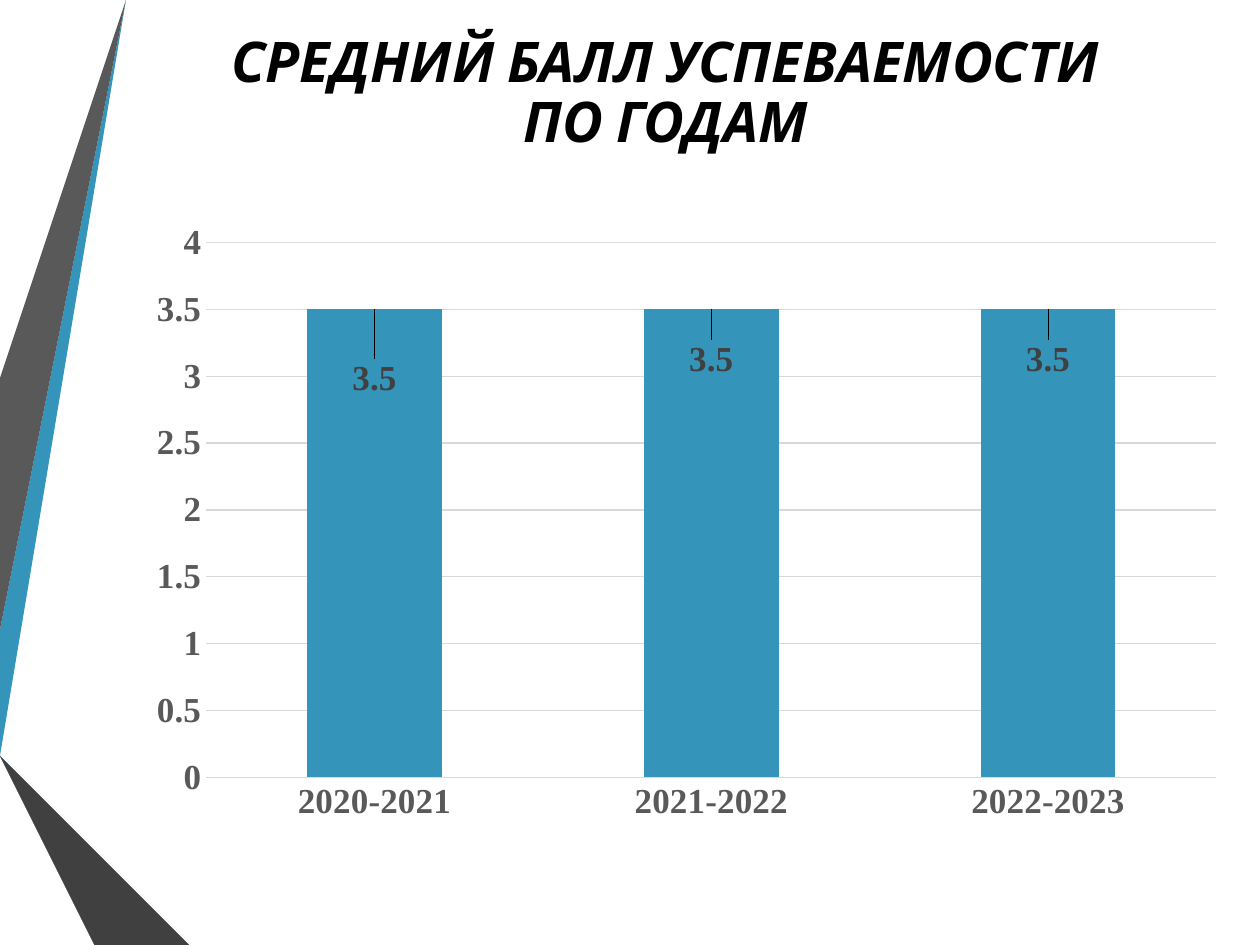
from lxml.etree import SubElement
from pptx import Presentation
from pptx.chart.data import CategoryChartData
from pptx.dml.color import RGBColor
from pptx.enum.chart import XL_CHART_TYPE as ChartType
from pptx.enum.chart import XL_LABEL_POSITION as LabelPosition
from pptx.enum.chart import XL_TICK_MARK as TickMark
from pptx.enum.text import MSO_ANCHOR, MSO_AUTO_SIZE, PP_ALIGN
from pptx.oxml.ns import qn
from pptx.util import Inches, Pt

BLUE = RGBColor(0x34, 0x94, 0xBA)
MID_BLUE = RGBColor(0x27, 0x6F, 0x8B)
DARK_BLUE = RGBColor(0x1A, 0x4A, 0x5D)
GRAY = RGBColor(0x59, 0x59, 0x59)
DARK_GRAY = RGBColor(0x40, 0x40, 0x40)
NEAR_BLACK = RGBColor(0x26, 0x26, 0x26)
GRID_GRAY = RGBColor(0xD9, 0xD9, 0xD9)
BLACK = RGBColor(0, 0, 0)

TITLE = "СРЕДНИЙ БАЛЛ УСПЕВАЕМОСТИ\vПО ГОДАМ"
YEARS = ["2020-2021", "2021-2022", "2022-2023"]
SCORES = [3.5, 3.5, 3.5]
LABEL_DROPS = [0.15, 0.12, 0.12]
RIBBONS = [
    (BLUE, [(0, 5.44), (0, 5.75), (0.22, 5.79), (1.17, 0), (0.89, 0)]),
    (GRAY, [(0.83, 0), (0.55, 0), (0, 3.36), (0, 5.06)]),
    (NEAR_BLACK, [(0, 6.19), (0, 6.21), (0.93, 7.5), (0.99, 7.5)]),
    (DARK_BLUE, [(0, 5.79), (0, 5.8), (1.56, 7.5), (1.63, 7.5)]),
    (MID_BLUE, [(0, 5.79), (1.63, 7.5), (2.33, 7.5), (0.22, 5.79), (0, 5.75)]),
    (DARK_GRAY, [(0, 6.19), (0.99, 7.5), (1.51, 7.5), (0, 5.86)]),
]


def style_font(font, name, size, color):
    font.name = name
    font.size = Pt(size)
    font.bold = True
    font.color.rgb = color


def add_ribbon(slide, color, points):
    builder = slide.shapes.build_freeform(*points[0], scale=Inches(1))
    builder.add_line_segments(points[1:], close=True)
    shape = builder.convert_to_shape()
    shape.shadow.inherit = False
    shape.fill.solid()
    shape.fill.fore_color.rgb = color
    shape.line.fill.background()


def place_title(slide):
    title = slide.shapes.title
    title.left, title.top = Inches(1.07), Inches(0.5)
    title.width, title.height = Inches(8.43), Inches(0.5)
    frame = title.text_frame
    frame.text = TITLE
    frame.word_wrap = True
    frame.auto_size = MSO_AUTO_SIZE.NONE
    frame.vertical_anchor = MSO_ANCHOR.MIDDLE
    paragraph = frame.paragraphs[0]
    paragraph.alignment = PP_ALIGN.CENTER
    paragraph.line_spacing = 0.9
    for run in paragraph.runs:
        style_font(run.font, "Cabin", 32, BLACK)
        run.font.italic = True


def lower_label(series, index, drop):
    label = series.points[index].data_label
    style_font(label.font, "Times New Roman", 20, DARK_GRAY)
    label.position = LabelPosition.OUTSIDE_END
    element = series.points[index]._element.xpath(f"c:dLbls/c:dLbl[c:idx/@val='{index}']")[0]
    layout = SubElement(element, qn("c:layout"))
    manual = SubElement(layout, qn("c:manualLayout"))
    for axis, offset in (("c:x", 0), ("c:y", drop)):
        SubElement(manual, qn(axis)).set("val", str(offset))
    element.insert(1, layout)


def add_score_chart(slide):
    data = CategoryChartData()
    data.categories = YEARS
    data.add_series("Series 1", SCORES)
    chart = slide.shapes.add_chart(
        ChartType.COLUMN_CLUSTERED,
        Inches(1.07), Inches(1.67), Inches(8.76), Inches(4.95), data,
    ).chart
    chart.has_title = False
    chart.has_legend = False
    style_font(chart.font, "Times New Roman", 20, BLACK)
    for axis in (chart.category_axis, chart.value_axis):
        axis.major_tick_mark = TickMark.NONE
        axis.minor_tick_mark = TickMark.NONE
        axis.format.line.fill.background()
        style_font(axis.tick_labels.font, "Times New Roman", 20, GRAY)
    chart.value_axis.has_major_gridlines = True
    grid_line = chart.value_axis.major_gridlines.format.line
    grid_line.color.rgb = GRID_GRAY
    grid_line.width = Pt(0.75)
    plot = chart.plots[0]
    plot.gap_width = 150
    plot.vary_by_categories = False
    series = plot.series[0]
    series.format.fill.solid()
    series.format.fill.fore_color.rgb = BLUE
    series.data_labels.show_value = True
    style_font(series.data_labels.font, "Times New Roman", 20, DARK_GRAY)
    for index, drop in enumerate(LABEL_DROPS):
        lower_label(series, index, drop)


def main():
    presentation = Presentation()
    presentation.slide_width, presentation.slide_height = Inches(10), Inches(7.5)
    slide = presentation.slides.add_slide(presentation.slide_layouts[5])
    for color, points in RIBBONS:
        add_ribbon(slide, color, points)
    place_title(slide)
    add_score_chart(slide)
    presentation.save("out.pptx")


if __name__ == "__main__":
    main()
